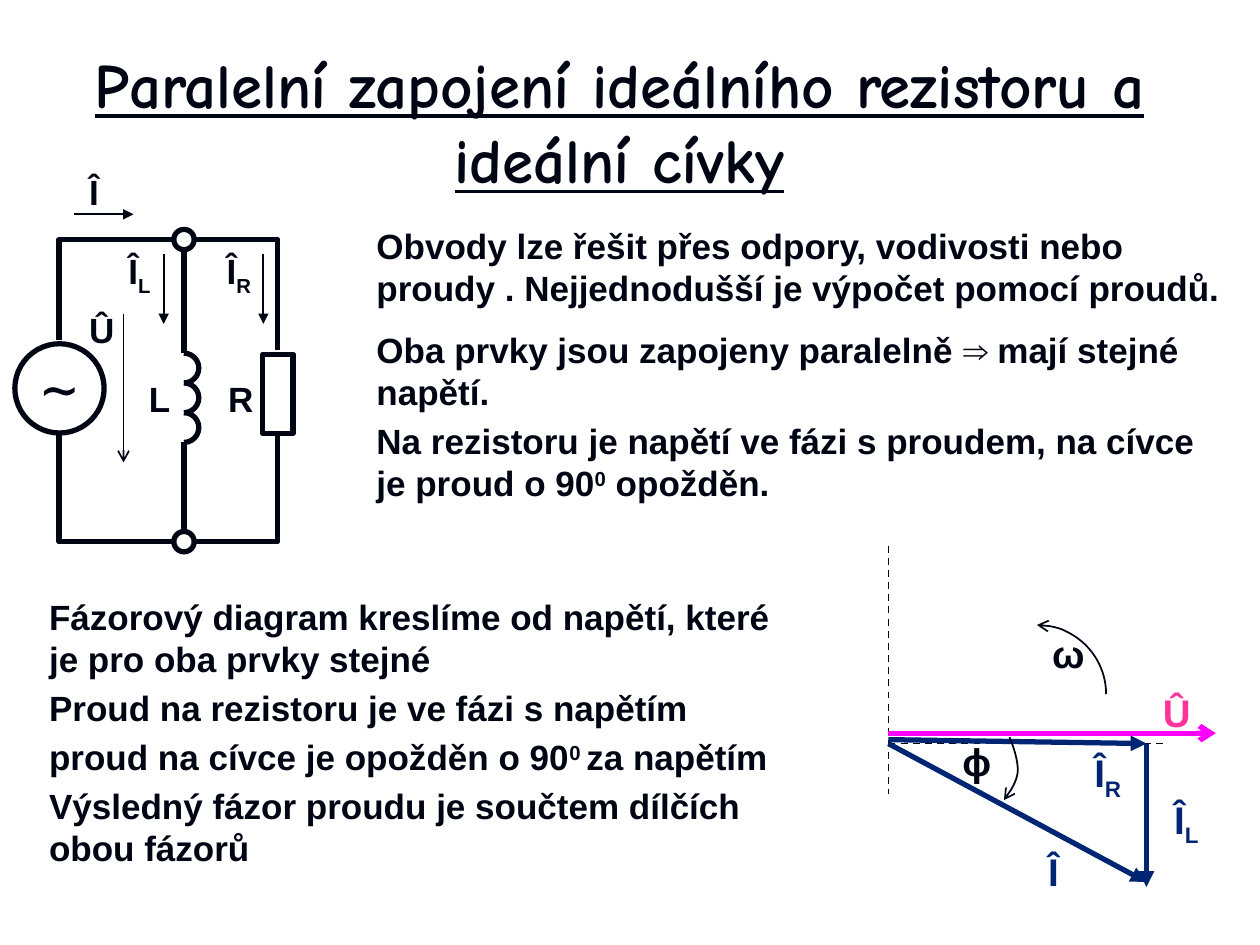
"""Build the slide on a resistor and a coil in parallel."""
import dataclasses
import typing

import lxml.etree
import pptx
import pptx.dml.color
import pptx.enum.dml
import pptx.enum.shapes
import pptx.enum.text
import pptx.oxml.ns
import pptx.util

Cm = pptx.util.Cm
Kind = pptx.enum.shapes.MSO_SHAPE
Link = pptx.enum.shapes.MSO_CONNECTOR
Align = pptx.enum.text.PP_ALIGN
Anchor = pptx.enum.text.MSO_ANCHOR
Fit = pptx.enum.text.MSO_AUTO_SIZE
qn = pptx.oxml.ns.qn


@dataclasses.dataclass(frozen=True)
class Theme:
    """Colours, fonts and sizes of the slide."""
    ink: str = "000514"
    navy: str = "002673"
    pink: str = "FF00FF"
    rose: str = "FF3399"
    sans: str = "Arial"
    serif: str = "Times New Roman"
    comic: str = "Comic Neue"
    head: float = 36
    wave: float = 28
    phase: float = 22
    body: float = 20
    thick: float = 3
    thin: float = 1
    inset: float = 0.1
    gap: float = 4


LOOK = Theme()


class Part(typing.NamedTuple):
    """A run of text with its baseline shift in percent."""
    text: str
    shift: int = 0


class Note(typing.NamedTuple):
    """A block of wrapped text."""
    box: tuple
    paras: list


class Label(typing.NamedTuple):
    """A short symbol with an optional subscript."""
    box: tuple
    sign: str
    sub: str = ""
    tint: str = LOOK.ink


class Line(typing.NamedTuple):
    """A straight line or an elbow between two points."""
    start: tuple
    end: tuple
    width: float = LOOK.thin
    tip: str = ""
    tint: str = LOOK.ink
    dash: bool = False
    bent: bool = False


def paint(text: str) -> pptx.dml.color.RGBColor:
    """Turn a hex string into a colour."""
    return pptx.dml.color.RGBColor.from_string(text)


def write(para, part: Part, size: float, tint: str = LOOK.ink, face: str = LOOK.sans):
    """Add one bold run and return it."""
    run = para.add_run()
    run.text = part.text
    run.font.size, run.font.bold, run.font.name = pptx.util.Pt(size), True, face
    run.font.color.rgb = paint(tint)
    if part.shift:
        run._r.get_or_add_rPr().set("baseline", str(part.shift * 1000))
    return run


def frame(slide, box: tuple, wrap: bool):
    """Add a text box with narrow margins and return its frame."""
    body = slide.shapes.add_textbox(*map(Cm, box)).text_frame
    body.word_wrap, body.auto_size = wrap, Fit.SHAPE_TO_FIT_TEXT
    body.margin_left = body.margin_right = Cm(LOOK.inset)
    body.margin_top = body.margin_bottom = Cm(LOOK.inset)
    return body


def put_note(slide, note: Note) -> None:
    """Write a block of paragraphs."""
    body = frame(slide, note.box, True)
    for rank, parts in enumerate(note.paras):
        para = body.add_paragraph() if rank else body.paragraphs[0]
        para.space_before = pptx.util.Pt(LOOK.gap if rank else 0)
        for part in parts:
            write(para, part, LOOK.body)


def put_label(slide, label: Label, size: float, align, anchor) -> None:
    """Write a symbol and its subscript."""
    body = frame(slide, label.box, False)
    body.vertical_anchor = anchor
    para = body.paragraphs[0]
    para.alignment = align
    write(para, Part(label.sign), size, label.tint)
    if label.sub:
        write(para, Part(label.sub, -25), size, label.tint)


def add_tip(line, end: str, kind: str) -> None:
    """Put an arrowhead on one end of a line."""
    lxml.etree.SubElement(line._get_or_add_ln(), qn(f"a:{end}"), type=kind)


def put_line(slide, item: Line) -> None:
    """Draw a line or an elbow that leaves its start sideways."""
    kind = Link.ELBOW if item.bent else Link.STRAIGHT
    link = slide.shapes.add_connector(kind, *map(Cm, item.start + item.end))
    frame_xml = link._element.spPr
    if item.bent:
        frame_xml.find(qn("a:prstGeom")).set("prst", "bentConnector2")
    link.line.width = pptx.util.Pt(item.width)
    link.line.color.rgb = paint(item.tint)
    if item.dash:
        link.line.dash_style = pptx.enum.dml.MSO_LINE.DASH
    if item.tip:
        add_tip(link.line, "tailEnd", item.tip)
    lxml.etree.SubElement(frame_xml, qn("a:effectLst"))


def ink(shape, width: float):
    """Leave a shape as a bare outline and return it."""
    shape.shadow.inherit = False
    shape.fill.background()
    shape.line.color.rgb = paint(LOOK.ink)
    shape.line.width = pptx.util.Pt(width)
    return shape


def put_shape(slide, kind, box: tuple, width: float = LOOK.thick):
    """Draw a preset outline."""
    return ink(slide.shapes.add_shape(kind, *map(Cm, box)), width)


def curve(knots: list, steps: int = 8) -> list:
    """Sample a chain of cubic curves."""
    spots = [knots[0]]
    for k in range(0, len(knots) - 1, 3):
        for step in range(1, steps + 1):
            t = step / steps
            rates = ((1 - t) ** 3, 3 * t * (1 - t) ** 2, 3 * t * t * (1 - t), t ** 3)
            spots.append(tuple(sum(r * p[axis] for r, p in zip(rates, knots[k:k + 4]))
                               for axis in (0, 1)))
    return spots


def put_head(slide) -> None:
    """Fill and place the title."""
    title = slide.shapes.title
    title.left, title.top, title.width, title.height = map(Cm, (0.89, 0.53, 23.19, 3.81))
    body = title.text_frame
    body.word_wrap, body.auto_size, body.vertical_anchor = True, Fit.NONE, Anchor.MIDDLE
    para = body.paragraphs[0]
    para.alignment = Align.CENTER
    text = Part("Paralelní zapojení ideálního rezistoru a ideální cívky")
    write(para, text, LOOK.head, face=LOOK.comic).font.underline = True


def put_plan(slide) -> None:
    """Draw the circuit."""
    mid, top, low, dot, turn = 3.71, 4.83, 10.92, 0.41, 0.6
    source = put_shape(slide, Kind.OVAL, (0.3, 6.93, 1.8, 1.8)).text_frame
    source.word_wrap, source.vertical_anchor = False, Anchor.MIDDLE
    source.paragraphs[0].alignment = Align.CENTER
    write(source.paragraphs[0], Part("∼"), LOOK.wave, face=LOOK.serif)
    put_shape(slide, Kind.RECTANGLE, (5.3, 7.14, 0.61, 1.6))
    for y, left, right, coil in ((top, 6.86, 7.06, 7.12), (low, 8.76, 8.79, 8.92)):
        put_shape(slide, Kind.OVAL, (mid - dot / 2, y - dot / 2, dot, dot))
        put_line(slide, Line((mid - 0.25, y), (1.19, left), LOOK.thick, bent=True))
        put_line(slide, Line((mid + 0.25, y), (5.6, right), LOOK.thick, bent=True))
        rim = y + (dot / 2 if coil > y else -dot / 2)
        put_line(slide, Line((mid, coil), (mid, rim), LOOK.thick))
    for k in range(3):
        arc = put_shape(slide, Kind.ARC, (mid - turn / 2, 7.12 + k * turn, turn, turn))
        arc.adjustments[0], arc.adjustments[1] = 162, 54
    for item in (Line((2.49, 6.32), (2.49, 9.32), tip="arrow"),
                 Line((1.5, 4.32), (2.69, 4.32), tip="triangle"),
                 Line((3.3, 5.13), (3.3, 6.53), tip="triangle"),
                 Line((5.31, 5.13), (5.31, 6.53), tip="triangle")):
        put_line(slide, item)
    for label in (Label((1.7, 3.33, 0.41, 1.04), "Î"), Label((1.7, 6.12, 0.71, 1.04), "Û"),
                  Label((2.9, 7.52, 0.64, 1.04), "L"), Label((4.5, 7.52, 0.71, 1.04), "R"),
                  Label((2.49, 4.93, 0.69, 1.07), "Î", "L"),
                  Label((4.47, 4.93, 0.74, 1.07), "Î", "R")):
        put_label(slide, label, LOOK.body, Align.LEFT, Anchor.TOP)


def put_phase(slide) -> None:
    """Draw the phasor diagram."""
    x, y, far, bold = 17.91, 14.99, 23.11, LOOK.thick
    for item in (Line((x, 11), (x, 16), dash=True), Line((x, y), (23.5, y), dash=True),
                 Line((x, 14.91), (far, y), bold, "triangle", LOOK.navy),
                 Line((x, 14.78), (24.51, 14.78), bold, "arrow", LOOK.pink),
                 Line((far, y), (far, 17.88), bold, "triangle", LOOK.navy),
                 Line((x, y), (far, 17.78), bold, "triangle", LOOK.navy)):
        put_line(slide, item)
    spin = put_shape(slide, Kind.ARC, (19.51, 12.6, 2.79, 2.79), LOOK.thin)
    add_tip(spin.line, "headEnd", "arrow")
    spots = [tuple(map(Cm, spot)) for spot in curve([
        (20.35, 14.86), (20.45, 15.09), (20.52, 15.34), (20.52, 15.54),
        (20.5, 15.77), (20.37, 15.95), (20.24, 16.13)])]
    pen = slide.shapes.build_freeform(*spots[0])
    pen.add_line_segments(spots[1:], close=False)
    add_tip(ink(pen.convert_to_shape(), LOOK.thin).line, "tailEnd", "arrow")
    for label in (Label((21.89, 15.06, 0.81, 1.14), "Î", "R", LOOK.navy),
                  Label((23.34, 13.79, 0.76, 1.14), "Û", tint=LOOK.rose),
                  Label((21.11, 12.6, 0.74, 1.14), "ω"),
                  Label((23.52, 16, 0.74, 1.14), "Î", "L", LOOK.navy),
                  Label((21.03, 16.99, 0.41, 1.14), "Î", tint=LOOK.navy),
                  Label((19.3, 14.78, 0.66, 1.14), "ϕ")):
        put_label(slide, label, LOOK.phase, Align.RIGHT, Anchor.MIDDLE)


NOTES = (
    Note((7.49, 4.42, 17.4, 1.9), [
        [Part("Obvody lze řešit přes odpory, vodivosti nebo proudy . "
              "Nejjednodušší je výpočet pomocí proudů.")]]),
    Note((7.49, 6.53, 16.79, 3.76), [
        [Part("Oba prvky jsou zapojeny paralelně ⇒ mají stejné napětí.")],
        [Part("Na rezistoru je napětí ve fázi s proudem, na cívce je proud o 90"),
         Part("0", 30), Part(" opožděn.")]]),
    Note((0.89, 11.91, 15.01, 5.84), [
        [Part("Fázorový diagram kreslíme od napětí, které je pro oba prvky stejné")],
        [Part("Proud na rezistoru je ve fázi s napětím")],
        [Part("proud na cívce je opožděn o 90"), Part("0 ", 30), Part("za napětím")],
        [Part("Výsledný fázor proudu je součtem dílčích obou fázorů")]]),
)


def main() -> None:
    """Build and save the deck."""
    deck = pptx.Presentation()
    deck.slide_width, deck.slide_height = Cm(25.4), Cm(19.05)
    slide = deck.slides.add_slide(deck.slide_layouts[5])
    put_head(slide)
    for note in NOTES:
        put_note(slide, note)
    put_plan(slide)
    put_phase(slide)
    deck.save("out.pptx")


if __name__ == "__main__":
    main()
